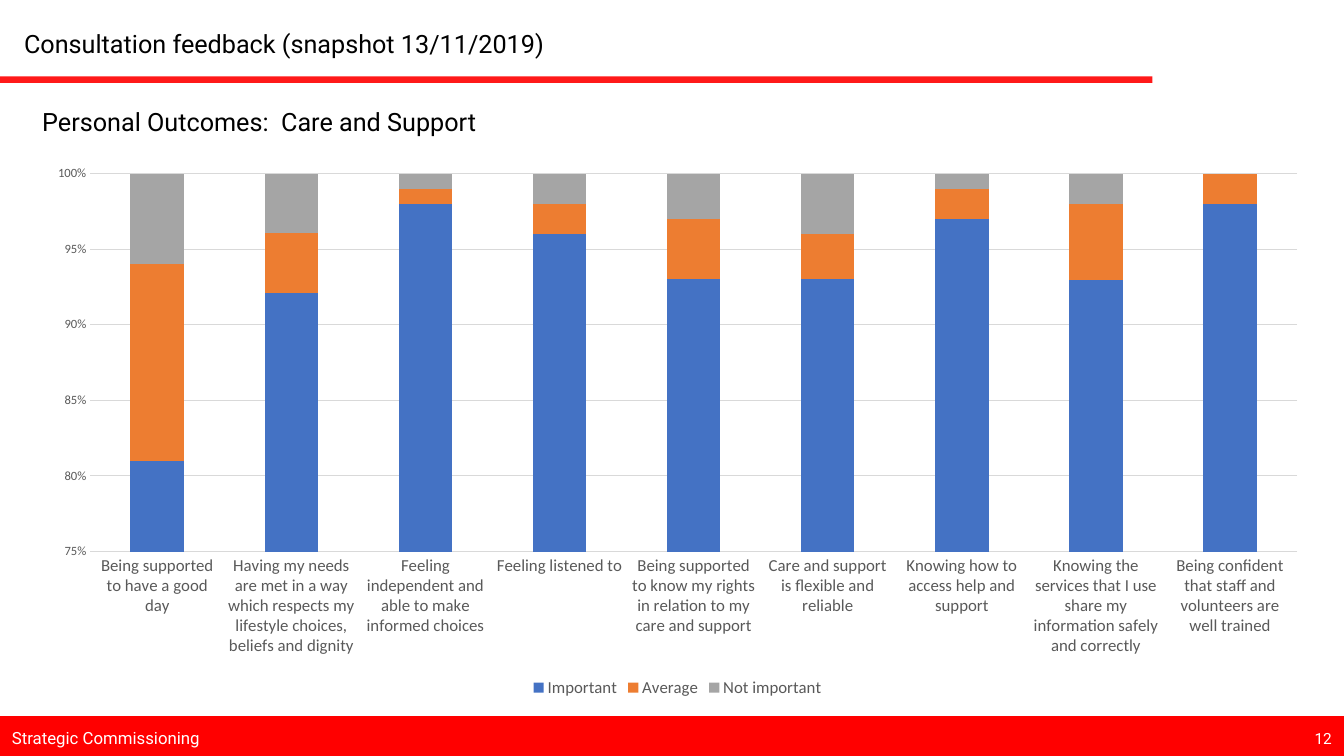
from lxml import etree
from pptx import Presentation
from pptx.chart.data import CategoryChartData as ChartData
from pptx.dml.color import RGBColor as RGB
from pptx.enum.chart import XL_CHART_TYPE as Kind
from pptx.enum.chart import XL_LEGEND_POSITION as Place
from pptx.enum.chart import XL_TICK_MARK as Tick
from pptx.enum.shapes import MSO_CONNECTOR as Link
from pptx.enum.shapes import MSO_SHAPE as Shape
from pptx.enum.text import MSO_ANCHOR as Anchor
from pptx.oxml.ns import qn
from pptx.util import Inches, Pt

HUE = {
    "red": "FF0000", "white": "FFFFFF", "black": "000000",
    "grey": "595959", "grid": "D9D9D9",
    "blue": "4472C4", "orange": "ED7D31", "silver": "A5A5A5",
}


def tint(name):
    return RGB.from_string(HUE[name])


def style(font, face, size, name):
    font.name = face
    font.size = Pt(size)
    font.color.rgb = tint(name)


deck = Presentation()
deck.slide_width = Inches(13.33)
deck.slide_height = Inches(7.5)
slide = deck.slides.add_slide(deck.slide_layouts[6])
shapes = slide.shapes

foot = shapes.add_shape(Shape.RECTANGLE, Inches(0), Inches(7.11), Inches(13.33), Inches(0.39))
foot.shadow.inherit = False
foot.fill.solid()
foot.fill.fore_color.rgb = tint("red")
foot.line.color.rgb = tint("red")
foot.line.width = Pt(1)

rule = shapes.add_connector(Link.STRAIGHT, Inches(0), Inches(0.79), Inches(11.43), Inches(0.79))
rule.line.color.rgb = tint("red")
rule.line.width = Pt(4.5)
solid = rule.line.fill.fore_color._xFill
etree.SubElement(solid[0], qn("a:alpha"), val="90000")
etree.SubElement(rule._element.spPr, qn("a:effectLst"))

for text, left, top, width, height, size, hue, anchor in [
    ("Strategic Commissioning", 0.02, 7.12, 2.33, 0.4, 12, "white", Anchor.MIDDLE),
    ("Personal Outcomes:  Care and Support", 0.32, 1.01, 11.09, 0.4, 18, "black", Anchor.TOP),
    ("12", 12.94, 7.18, 0.4, 0.29, 11, "white", Anchor.TOP),
    ("Consultation feedback (snapshot 13/11/2019)", 0.14, 0.23, 5.45, 0.4, 18, "black", Anchor.TOP),
]:
    box = shapes.add_textbox(Inches(left), Inches(top), Inches(width), Inches(height))
    frame = box.text_frame
    frame.word_wrap = True
    frame.vertical_anchor = anchor
    run = frame.paragraphs[0].add_run()
    run.text = text
    style(run.font, "Roboto", size, hue)

data = ChartData(number_format="0")
data.categories = [
    "Being supported to have a good day",
    "Having my needs are met in a way which respects my lifestyle choices, beliefs and dignity",
    "Feeling independent and able to make informed choices",
    "Feeling listened to",
    "Being supported to know my rights in relation to my care and support",
    "Care and support is flexible and reliable",
    "Knowing how to access help and support",
    "Knowing the services that I use share my information safely and correctly",
    "Being confident that staff and volunteers are well trained",
]
data.add_series("Important", [81, 93, 97, 96, 93, 93, 97, 92, 98])
data.add_series("Average", [13, 4, 1, 2, 4, 3, 2, 5, 2])
data.add_series("Not important", [6, 4, 1, 2, 3, 4, 1, 2, 0])

chart = shapes.add_chart(
    Kind.COLUMN_STACKED_100, Inches(0.32), Inches(1.54), Inches(12.8), Inches(5.42), data
).chart
style(chart.font, "Calibri", 10, "black")
chart.has_title = False
chart.has_legend = True
chart.legend.position = Place.BOTTOM
chart.legend.include_in_layout = False
style(chart.legend.font, "Calibri", 12, "grey")

plot = chart.plots[0]
plot.gap_width = 150
plot.overlap = 100
plot.vary_by_categories = False
for series, hue in zip(plot.series, ["blue", "orange", "silver"]):
    series.format.fill.solid()
    series.format.fill.fore_color.rgb = tint(hue)

cats, vals = chart.category_axis, chart.value_axis
for axis, size in [(cats, 12), (vals, 9)]:
    axis.major_tick_mark = Tick.NONE
    axis.minor_tick_mark = Tick.NONE
    style(axis.tick_labels.font, "Calibri", size, "grey")

vals.minimum_scale = 0.75
vals.maximum_scale = 1
vals.major_unit = 0.05
vals.has_major_gridlines = True
vals.tick_labels.number_format = "0%"
vals.tick_labels.number_format_is_linked = False
vals.format.line.fill.background()
for line in [cats.format.line, vals.major_gridlines.format.line]:
    line.color.rgb = tint("grid")
    line.width = Pt(0.75)

deck.save("out.pptx")
